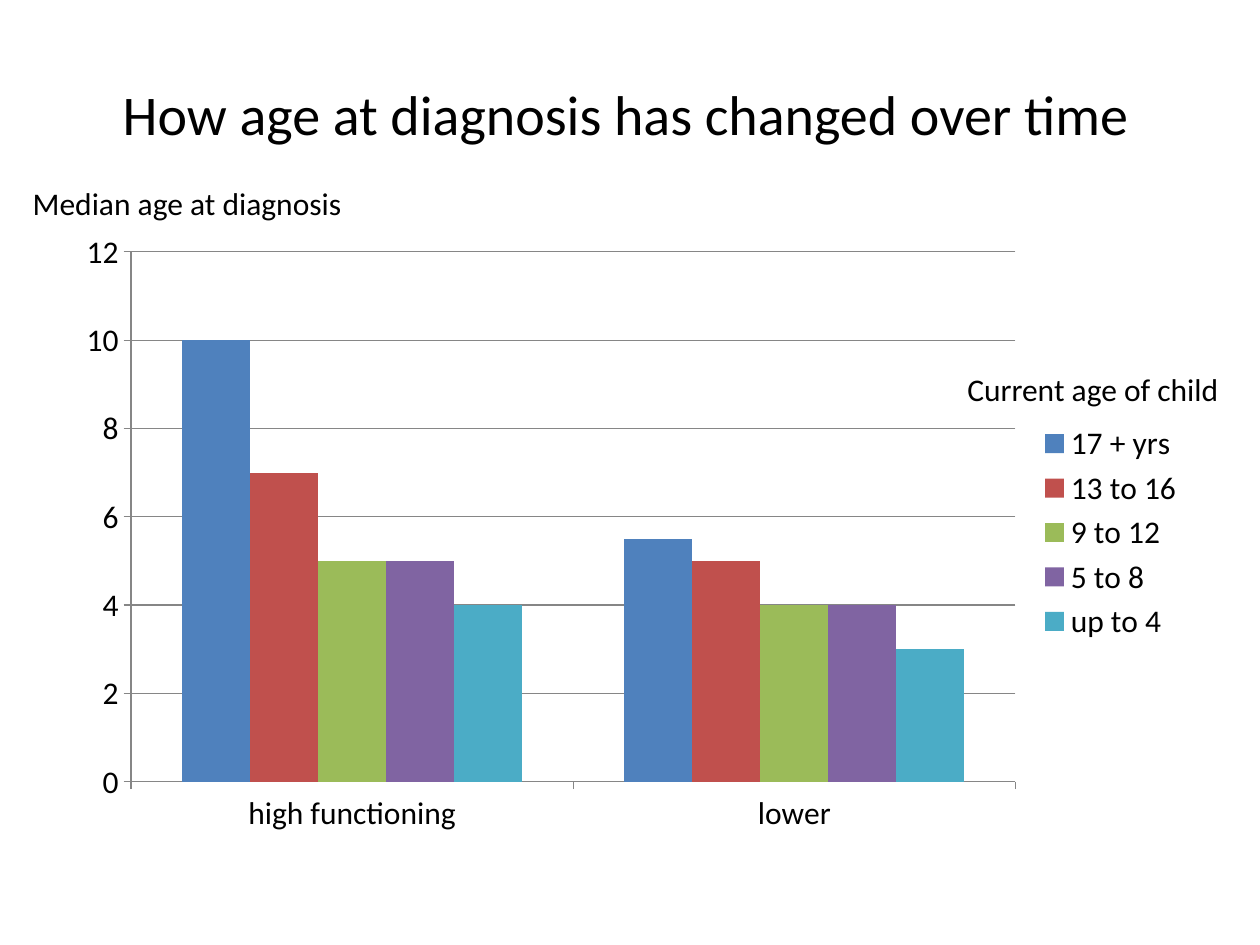
from lxml.etree import SubElement
from pptx import Presentation
from pptx.chart.data import CategoryChartData
from pptx.dml.color import RGBColor
from pptx.enum.chart import XL_CHART_TYPE as ChartType
from pptx.enum.chart import XL_LEGEND_POSITION as LegendPosition
from pptx.enum.chart import XL_TICK_MARK as TickMark
from pptx.enum.text import MSO_ANCHOR as Anchor
from pptx.enum.text import PP_ALIGN as Align
from pptx.oxml.ns import qn
from pptx.util import Cm, Pt

FONT = "Calibri"
BLACK = RGBColor(0x00, 0x00, 0x00)
GRAY = RGBColor(0x86, 0x86, 0x86)

# Content: text, place in cm (left, top, width, height), size, alignment, anchor
TEXTS = [
    ("How age at diagnosis has changed over time",
     (1.19, 1.19, 22.86, 2.18), 32, Align.CENTER, Anchor.MIDDLE),
    ("Median age at diagnosis",
     (0.41, 3.58, 7.54, 1.02), 18, Align.LEFT, Anchor.TOP),
    ("Current age of child",
     (19.25, 7.34, 5.77, 1.02), 18, Align.LEFT, Anchor.TOP),
]
CATEGORIES = ["high functioning", "lower"]
AGE_GROUPS = [
    ("17 + yrs", (10, 5.5), RGBColor(0x4F, 0x81, 0xBD)),
    ("13 to 16", (7, 5), RGBColor(0xC0, 0x50, 0x4D)),
    ("9 to 12", (5, 4), RGBColor(0x9B, 0xBB, 0x59)),
    ("5 to 8", (5, 4), RGBColor(0x80, 0x64, 0xA2)),
    ("up to 4", (4, 3), RGBColor(0x4B, 0xAC, 0xC6)),
]
CHART_PLACE = (1.27, 4.45, 22.86, 12.57)
PLOT_SHARE = {"x": 0.06, "y": 0.05, "w": 0.78, "h": 0.85}


def add_text(page, text, place, size, align, anchor):
    box = page.shapes.add_textbox(*map(Cm, place))
    frame = box.text_frame
    frame.word_wrap = True
    frame.vertical_anchor = anchor
    para = frame.paragraphs[0]
    para.alignment = align
    span = para.add_run()
    span.text = text
    span.font.name = FONT
    span.font.size = Pt(size)
    span.font.color.rgb = BLACK


def place_plot(chart):
    """Fix the inner plot area as shares of the chart frame."""
    area = chart.element.find(".//" + qn("c:plotArea"))
    layout = area.find(qn("c:layout"))
    if layout is None:
        layout = SubElement(area, qn("c:layout"))
        area.insert(0, layout)
    manual = SubElement(layout, qn("c:manualLayout"))
    settings = [("layoutTarget", "inner"), ("xMode", "edge"), ("yMode", "edge")]
    for tag, value in settings + list(PLOT_SHARE.items()):
        SubElement(manual, qn("c:" + tag)).set("val", str(value))


def add_age_chart(page):
    data = CategoryChartData()
    data.categories = CATEGORIES
    for name, values, _ in AGE_GROUPS:
        data.add_series(name, values)
    chart = page.shapes.add_chart(
        ChartType.COLUMN_CLUSTERED, *map(Cm, CHART_PLACE), data).chart
    chart.has_title = False
    chart.font.name = FONT
    chart.font.size = Pt(18)
    chart.font.color.rgb = BLACK

    # Columns
    plot = chart.plots[0]
    plot.vary_by_categories = False
    plot.gap_width = 150
    plot.overlap = 0
    for series, (_, _, color) in zip(plot.series, AGE_GROUPS):
        series.format.fill.solid()
        series.format.fill.fore_color.rgb = color

    # Axes and gridlines
    value_axis = chart.value_axis
    value_axis.minimum_scale, value_axis.maximum_scale = 0, 12
    value_axis.major_unit = 2
    value_axis.has_major_gridlines = True
    for axis in (chart.category_axis, value_axis):
        axis.major_tick_mark = TickMark.OUTSIDE
        axis.minor_tick_mark = TickMark.NONE
    for part in (chart.category_axis, value_axis, value_axis.major_gridlines):
        part.format.line.color.rgb = GRAY
        part.format.line.width = Pt(0.75)

    # Legend
    chart.has_legend = True
    chart.legend.position = LegendPosition.RIGHT
    chart.legend.include_in_layout = False
    place_plot(chart)


def main():
    deck = Presentation()
    deck.slide_width, deck.slide_height = Cm(25.4), Cm(19.05)
    page = deck.slides.add_slide(deck.slide_layouts[6])
    add_age_chart(page)
    for item in TEXTS:
        add_text(page, *item)
    deck.save("out.pptx")


if __name__ == "__main__":
    main()
